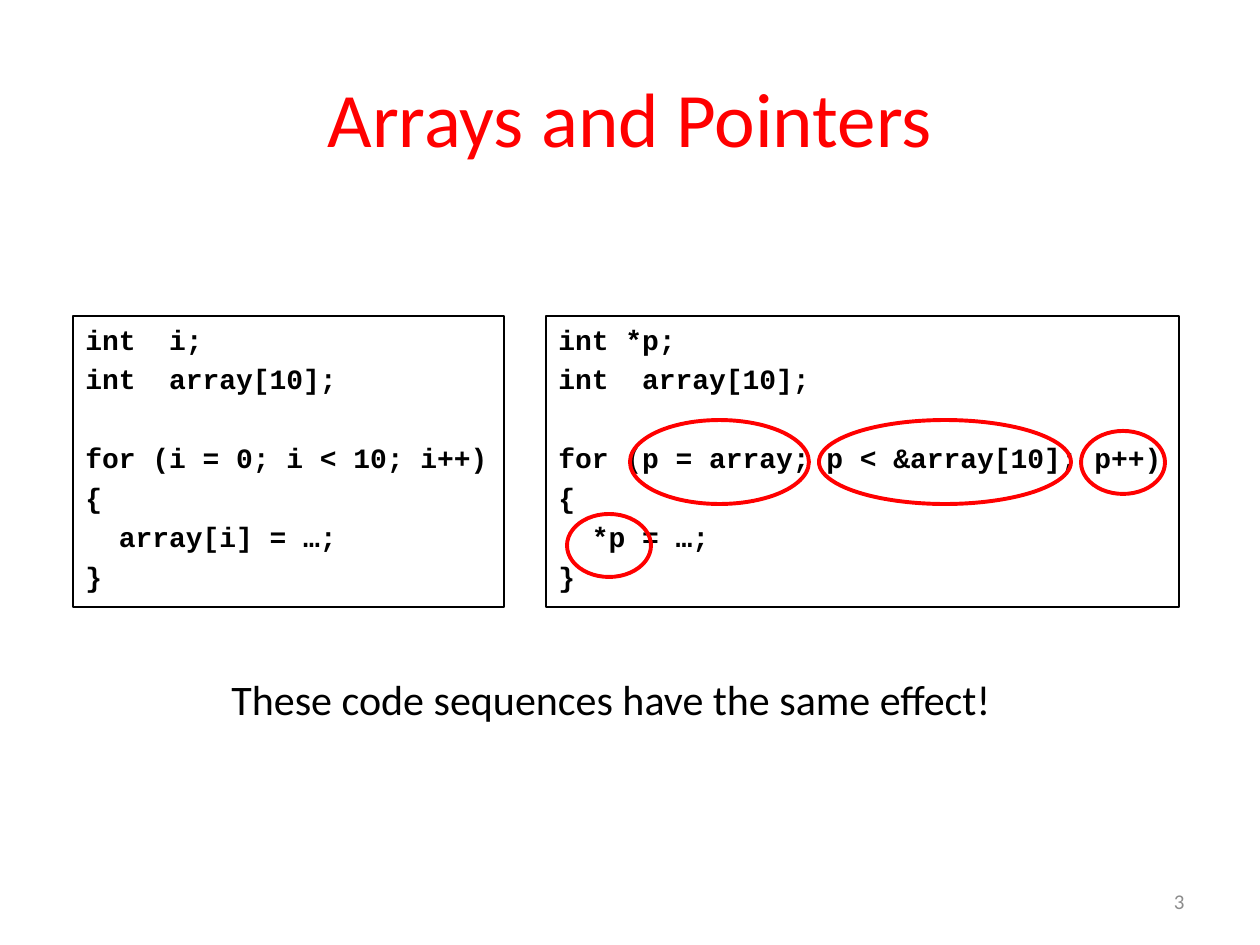
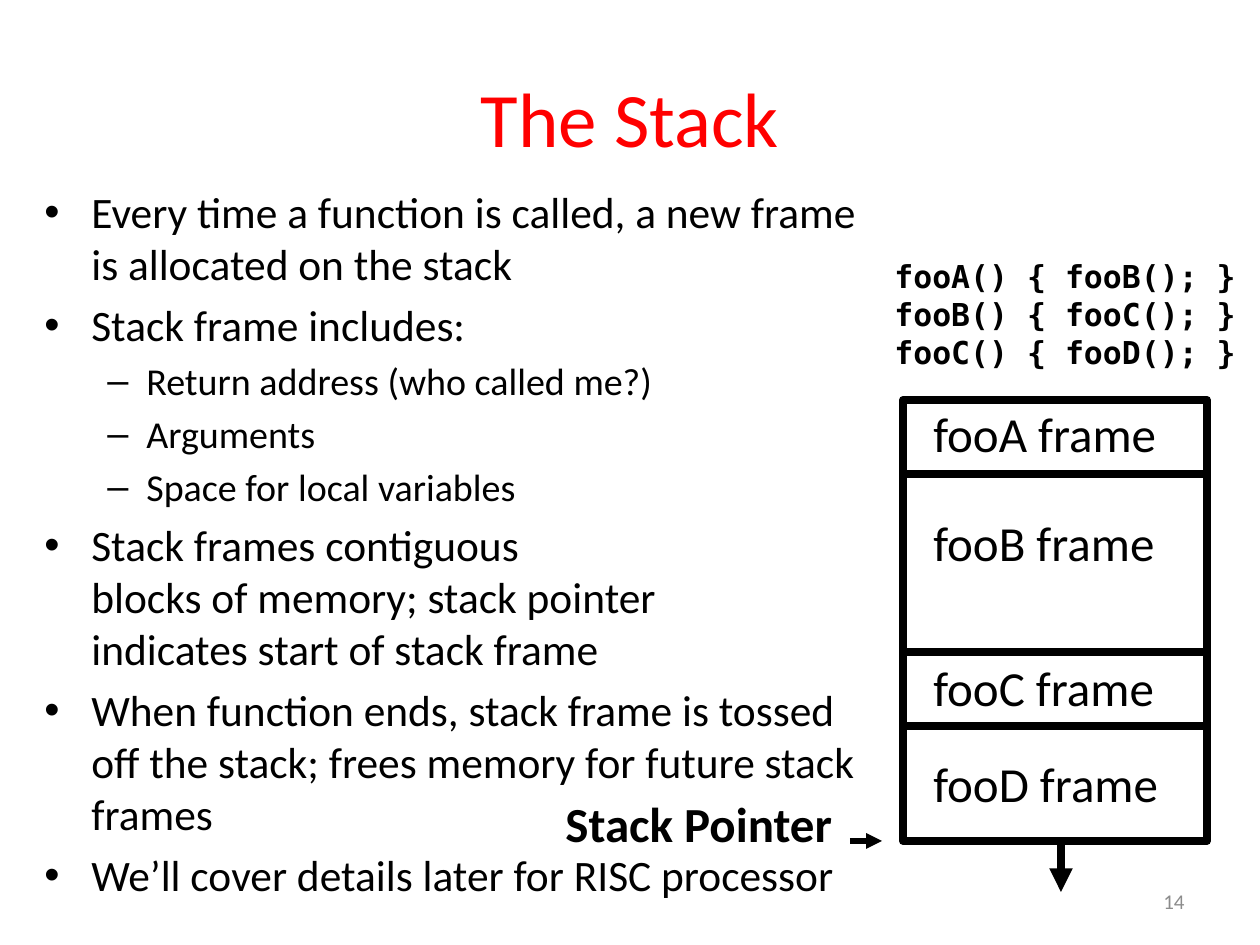
from lxml import etree
from pptx import Presentation
from pptx import util as u
from pptx.dml.color import RGBColor
from pptx.enum import shapes, text
from pptx.oxml.ns import qn

PX = 914400 / 126
BLACK = RGBColor(0x00, 0x00, 0x00)
RED = RGBColor(0xFF, 0x00, 0x00)
GREY = RGBColor(0x8C, 0x8C, 0x8C)
BODY, CODE, MONO = "Calibri", "Courier New", "DejaVu Sans Mono"
RECT, OVAL = shapes.MSO_SHAPE.RECTANGLE, shapes.MSO_SHAPE.OVAL
LEFT, CENTER, RIGHT = (text.PP_ALIGN.LEFT, text.PP_ALIGN.CENTER,
                       text.PP_ALIGN.RIGHT)
TOP, MIDDLE = text.MSO_ANCHOR.TOP, text.MSO_ANCHOR.MIDDLE


def add_text(tf, lines, size=24, font=BODY, color=BLACK, bold=False,
             align=LEFT, anchor=TOP, wrap=True):
    """Fill a frame, one paragraph a line; a newline is a line break."""
    tf.word_wrap, tf.vertical_anchor = wrap, anchor
    for i, line in enumerate(lines):
        p = tf.paragraphs[0] if i == 0 else tf.add_paragraph()
        p.alignment = align
        for j, part in enumerate(line.split("\n")):
            if j:
                p.add_line_break()
            r = p.add_run()
            r.text = part
            r.font.name, r.font.size, r.font.bold = font, u.Pt(size), bold
            r.font.color.rgb = color
    return tf.paragraphs


def add_outline(s, kind, box, color, width):
    sp = s.shapes.add_shape(kind, *[round(v * PX) for v in box])
    sp.shadow.inherit = False
    sp.fill.background()
    sp.line.color.rgb, sp.line.width = color, u.Pt(width)
    return sp


prs = Presentation()
prs.slide_width, prs.slide_height = u.Inches(10), u.Inches(7.5)

# Title and number of both slides
slides = []
for title, number in (("Arrays and Pointers", "3"), ("The Stack", "14")):
    s = prs.slides.add_slide(prs.slide_layouts[6])
    slides.append(s)
    for box, line, fmt in (
            ((63, 38, 1134, 158), title, dict(size=44, color=RED, align=CENTER)),
            ((903, 876, 294, 50), number, dict(size=12, color=GREY, align=RIGHT))):
        tb = s.shapes.add_textbox(*[round(v * PX) for v in box])
        add_text(tb.text_frame, [line], anchor=MIDDLE, **fmt)
arrays, stack = slides

# Arrays and Pointers: two code listings
listings = (
    (73, 431, ["int  i;", "int  array[10];", "for (i = 0; i < 10; i++)",
               "{", "  array[i] = …;", "}"]),
    (546, 633, ["int *p;", "int  array[10];",
                "for (p = array; p < &array[10]; p++)",
                "{", "  *p = …;", "}"]))
for x, w, code in listings:
    sp = add_outline(arrays, RECT, (x, 316, w, 291), BLACK, 0.75)
    for p in add_text(sp.text_frame, code, size=16, font=CODE, bold=True,
                      wrap=False):
        starts_loop = p.text.startswith("for")
        p.space_before = u.Pt(26 if starts_loop else 3.4)

pointer_marks = ((630, 420, 179, 84), (819, 420, 252, 84),
                 (1081, 431, 84, 63), (567, 514, 84, 63))
for box in pointer_marks:
    add_outline(arrays, OVAL, box, RED, 2.25)

tb = arrays.shapes.add_textbox(*[round(v * PX) for v in (219, 667, 793, 63)])
add_text(tb.text_frame, ["These code sequences have the same effect!"],
         wrap=False)

# The Stack: bullets with level, wording
bullets = (
    (0, "Every time a function is called, a new frame is allocated on the stack"),
    (0, "Stack frame includes:"),
    (1, "Return address (who called me?)"),
    (1, "Arguments"),
    (1, "Space for local variables"),
    (0, "Stack frames contiguous \nblocks of memory; stack pointer \n"
        "indicates start of stack frame"),
    (0, "When function ends, stack frame is tossed off the stack; "
        "frees memory for future stack frames"),
    (0, "We’ll cover details later for RISC processor"))
# Per level: character, size, left margin, hanging indent, space before
levels = (("•", 24.8, 47, 47, 5), ("–", 21.7, 102, 39, 4.3))

tb = stack.shapes.add_textbox(*[round(v * PX) for v in (32, 179, 872, 624)])
for p, (level, _) in zip(add_text(tb.text_frame, [b for _, b in bullets]),
                         bullets):
    char, size, margin, hang, before = levels[level]
    p.level, p.space_before = level, u.Pt(before)
    for r in p.runs:
        r.font.size = u.Pt(size)
    pPr = p._p.get_or_add_pPr()
    pPr.set("marL", str(round(margin * PX)))
    pPr.set("indent", str(round(-hang * PX)))
    etree.SubElement(pPr, qn("a:buFont")).set("typeface", "Arial")
    etree.SubElement(pPr, qn("a:buChar")).set("char", char)

# Stack frames, each resting on the one above: name, height, label top
frames = (("fooA", 74, 397), ("fooB", 178, 506),
          ("fooC", 74, 651), ("fooD", 115, 747))
# The pointer label sits between the last two bullet lines
labels = [((553, 787, 297, 72), ["Stack Pointer"], dict(size=28, bold=True))]
y = 400
for name, h, label_y in frames:
    add_outline(stack, RECT, (903, y, 304, h), BLACK, 4.5)
    labels.append(((921, label_y, 254, 72), [f"{name} frame"], dict(size=28)))
    y += h

calls = [f"foo{a}() {{ foo{b}(); }}" for a, b in zip("ABC", "BCD")]
labels.append(((882, 251, 378, 127), calls,
               dict(size=18, font=MONO, bold=True, wrap=True)))
for box, lines, fmt in labels:
    tb = stack.shapes.add_textbox(*[round(v * PX) for v in box])
    add_text(tb.text_frame, lines, **{"wrap": False, **fmt})

# Arrows to the stack pointer and in the direction of growth
for ends, width in (((850, 841, 882, 841), 3), ((1061, 841, 1061, 892), 4.5)):
    cx = stack.shapes.add_connector(shapes.MSO_CONNECTOR.STRAIGHT,
                                    *[round(v * PX) for v in ends])
    cx.line.color.rgb, cx.line.width = BLACK, u.Pt(width)
    etree.SubElement(cx.line._get_or_add_ln(), qn("a:tailEnd")).set(
        "type", "triangle")
    etree.SubElement(cx._element.spPr, qn("a:effectLst"))

prs.save("out.pptx")
